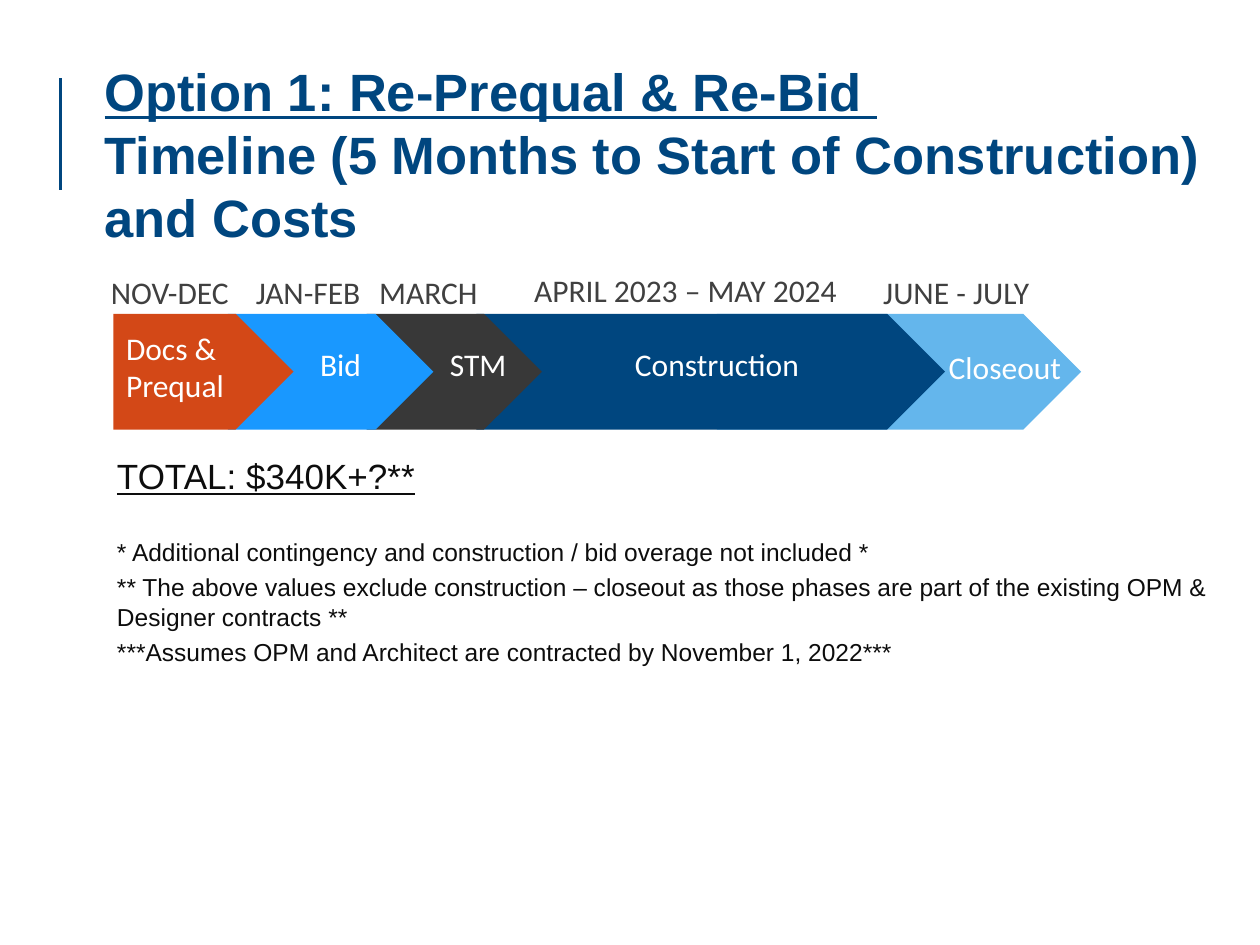
"""Build the Option 1 re-bid timeline slide."""
from lxml import etree
from pptx import Presentation
from pptx.dml.color import RGBColor
from pptx.enum.shapes import MSO_CONNECTOR, MSO_SHAPE
from pptx.enum.text import MSO_ANCHOR, MSO_AUTO_SIZE
from pptx.oxml.ns import qn
from pptx.util import Inches, Pt

STRAIGHT = MSO_CONNECTOR.STRAIGHT
ARROW_BAND = MSO_SHAPE.PENTAGON
TOP, MIDDLE = MSO_ANCHOR.TOP, MSO_ANCHOR.MIDDLE
FIXED, GROW = MSO_AUTO_SIZE.NONE, MSO_AUTO_SIZE.SHAPE_TO_FIT_TEXT

THEME = {
    "navy": "00467F", "sky": "64B6EC", "charcoal": "383838", "blue": "1998FF",
    "orange": "D34817", "month": "404040", "ink": "0D0D0D", "white": "FFFFFF",
    "heading": "Arial", "label": "Calibri",
    "title_size": 30, "total_size": 20, "label_size": 18, "note_size": 14,
}

deck = Presentation()
deck.slide_width, deck.slide_height = Inches(10), Inches(7.5)
COL, ROW = deck.slide_width / 100, deck.slide_height / 75
slide = deck.slides.add_slide(deck.slide_layouts[6])


def color(name):
    return RGBColor.from_string(THEME[name])


def add_text(area, paragraphs, font="heading", ink="ink", margins=(0.1, 0.05),
             anchor=TOP, fit=FIXED, bold=False, leading=None):
    left, top, width, height = area
    box = slide.shapes.add_textbox(
        int(left * COL), int(top * ROW), int(width * COL), int(height * ROW))
    frame = box.text_frame
    frame.word_wrap = True
    frame.auto_size, frame.vertical_anchor = fit, anchor
    frame.margin_left, frame.margin_right = Inches(margins[0]), Inches(min(margins[0], 0.1))
    frame.margin_top = frame.margin_bottom = Inches(margins[1])
    for index, (runs, size, space) in enumerate(paragraphs):
        paragraph = frame.paragraphs[0] if index == 0 else frame.add_paragraph()
        if space:
            paragraph.space_before = Pt(space)
        if leading:
            paragraph.line_spacing = Pt(leading)
        for position, (words, underlined) in enumerate(runs):
            if position:
                paragraph.add_line_break()
            run = paragraph.add_run()
            run.text = words
            run.font.name, run.font.size = THEME[font], Pt(THEME[size])
            run.font.bold, run.font.underline = bold, underlined
            run.font.color.rgb = color(ink)


accent = slide.shapes.add_connector(
    STRAIGHT, int(4.8 * COL), int(6.2 * ROW), int(4.8 * COL), int(15.1 * ROW))
accent.line.color.rgb = color("navy")
accent.line.width = Pt(2)
etree.SubElement(accent._element.spPr, qn("a:effectLst"))

add_text((8.3, 9.3, 91.7, 5.8), [([
    ("Option 1: Re-Prequal & Re-Bid ", True),
    ("Timeline (5 Months to Start of Construction) and Costs", False),
], "title_size", 0)], ink="navy", margins=(0, 0), anchor=MIDDLE, bold=True, leading=36)

add_text((8.3, 35.6, 89.2, 34.4), [
    ([("TOTAL: $340K+?**", True)], "total_size", 0),
    ([("* Additional contingency and construction / bid overage not included *", False)],
     "note_size", 23),
    ([("** The above values exclude construction – closeout as those phases are part of "
       "the existing OPM & Designer contracts **", False)], "note_size", 3.4),
    ([("***Assumes OPM and Architect are contracted by November 1, 2022***", False)],
     "note_size", 3.4),
])

BAND_TOP, BAND_HEIGHT, LABEL_HEIGHT = 24.9, 9.2, 4
phases = [
    ("orange", 9, 14.3, "Docs & Prequal", (8.4, 25.6, 17.2, 7), "NOV-DEC", (7.2, 21.2, 12.6)),
    ("blue", 18.1, 16.3, "Bid", (23.8, 26.9, 7.2, LABEL_HEIGHT), "JAN-FEB", (18.7, 21.2, 11.1)),
    ("charcoal", 29.1, 13.9, "STM", (34.1, 26.9, 8.2, LABEL_HEIGHT), "MARCH", (28.5, 21.2, 11.6)),
    ("navy", 37.8, 37.2, "Construction", (48.8, 26.9, 16.6, LABEL_HEIGHT),
     "APRIL 2023 – MAY 2024", (40.8, 21, 27.7)),
    ("sky", 56.9, 28.9, "Closeout", (73.7, 27.1, 12.7, LABEL_HEIGHT),
     "JUNE - JULY", (68.5, 21.2, 15.2)),
]

for fill, left, width, *_ in reversed(phases):
    band = slide.shapes.add_shape(
        ARROW_BAND, int(left * COL), int(BAND_TOP * ROW),
        int(width * COL), int(BAND_HEIGHT * ROW))
    band.shadow.inherit = False
    band.fill.solid()
    band.fill.fore_color.rgb = color(fill)
    band.line.fill.background()

for _, _, _, phase, phase_area, months, months_area in phases:
    for words, area, ink in ((months, (*months_area, LABEL_HEIGHT), "month"),
                             (phase, phase_area, "white")):
        add_text(area, [([(words, False)], "label_size", 0)],
                 font="label", ink=ink, margins=(0.16, 0.05), fit=GROW)

deck.save("out.pptx")
